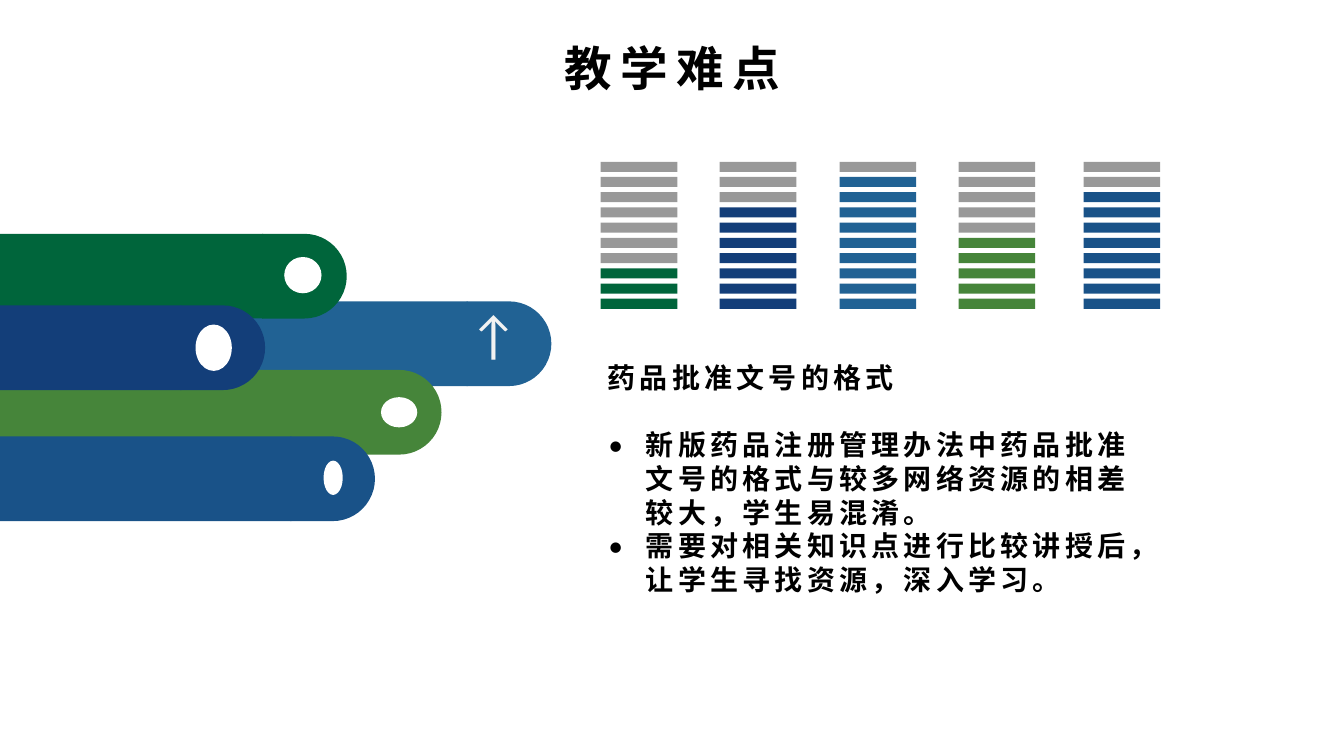
from pptx import Presentation
from pptx import util as u
from pptx.dml import color
from pptx.enum import shapes, text
from pptx.oxml import ns
from lxml import etree

COLOURS = {
    "sky": "216294",
    "forest": "00653B",
    "leaf": "46853A",
    "ocean": "195288",
    "navy": "133E79",
    "grey": "999999",
    "white": "FFFFFF",
    "arrow": "F2F2F2",
    "ink": "000000",
}
CJK_FONT, LATIN_FONT = "Noto Sans CJK SC", "Lato"
CELL = 0.1  # side of one grid cell in inches
COLUMNS, ROWS = 133.33, 75


class SlideBuilder:
    """Draws on one slide; all lengths are grid columns and rows."""

    def __init__(self, presentation):
        presentation.slide_width = self.length(COLUMNS)
        presentation.slide_height = self.length(ROWS)
        self.slide = presentation.slides.add_slide(presentation.slide_layouts[5])

    def length(self, cells):
        return u.Inches(cells * CELL)

    def colour(self, name):
        return color.RGBColor.from_string(COLOURS[name])

    def shape(self, kind, column, row, width, height, fill):
        box = [self.length(cells) for cells in (column, row, width, height)]
        shape = self.slide.shapes.add_shape(kind, *box)
        shape.shadow.inherit = False
        shape.fill.solid()
        shape.fill.fore_color.rgb = self.colour(fill)
        shape.line.fill.background()
        return shape

    def frame(self, shape, wrap=True):
        frame = shape.text_frame
        frame.auto_size = text.MSO_AUTO_SIZE.NONE
        frame.word_wrap = wrap
        frame.vertical_anchor = text.MSO_ANCHOR.TOP
        frame.margin_left = frame.margin_right = u.Inches(0.1)
        frame.margin_top = frame.margin_bottom = u.Inches(0.05)
        return frame

    def run(self, paragraph, words, size, font=CJK_FONT, fill="ink", bold=True, spacing=0):
        run = paragraph.add_run()
        run.text = words
        run.font.size = u.Pt(size)
        run.font.bold = bold
        run.font.color.rgb = self.colour(fill)
        run.font.name = font
        properties = run.font._element
        properties.set("spc", str(spacing * 100))
        etree.SubElement(properties, ns.qn("a:ea")).set("typeface", font)

    def title(self, words, column, row, width, height):
        shape = self.slide.shapes.title
        shape.left, shape.top = self.length(column), self.length(row)
        shape.width, shape.height = self.length(width), self.length(height)
        paragraph = self.frame(shape).paragraphs[0]
        paragraph.alignment = text.PP_ALIGN.CENTER
        paragraph.line_spacing = u.Pt(41)
        self.run(paragraph, words, 34, spacing=6)

    def textbox(self, column, row, width, height, wrap=True):
        box = [self.length(cells) for cells in (column, row, width, height)]
        return self.frame(self.slide.shapes.add_textbox(*box), wrap)

    def bullet(self, paragraph):
        properties = paragraph._p.get_or_add_pPr()
        indent = u.Inches(0.38)
        properties.set("marL", str(indent))
        properties.set("indent", str(-indent))
        etree.SubElement(properties, ns.qn("a:buFont")).set("typeface", LATIN_FONT)
        etree.SubElement(properties, ns.qn("a:buChar")).set("char", "•")

    def ribbon(self, row, cap_column, fill):
        """A band from the left edge of the slide with a rounded end."""
        size = 8.4
        self.shape(shapes.MSO_SHAPE.FLOWCHART_DELAY, cap_column, row, size, size, fill)
        self.shape(shapes.MSO_SHAPE.RECTANGLE, 0, row, cap_column + 0.1, size, fill)

    def dot(self, column, row, width, height):
        self.shape(shapes.MSO_SHAPE.OVAL, column, row, width, height, "white")

    def meter(self, column, level, fill, steps=10):
        """A stack of steps, the lowest `level` of them coloured."""
        for step in range(steps):
            self.shape(shapes.MSO_SHAPE.RECTANGLE, column, 16.05 + step * 1.51, 7.6, 1,
                       fill if step >= steps - level else "grey")


def main():
    presentation = Presentation()
    builder = SlideBuilder(presentation)

    # Title
    builder.title("教学难点", 44.8, 3.3, 43.8, 6.7)

    # Ribbons, each with its mark
    builder.ribbon(29.9, 46.3, "sky")
    paragraph = builder.textbox(47, 29.7, 3.9, 7.1, wrap=False).paragraphs[0]
    paragraph.alignment = text.PP_ALIGN.CENTER
    builder.run(paragraph, "↑", 36, LATIN_FONT, "arrow", bold=False)

    ribbons = [
        (23.2, 26, "forest", (28.2, 25.5, 3.7, 3.6)),
        (36.7, 35.4, "leaf", (37.8, 39.4, 3.6, 3)),
        (43.3, 28.8, "ocean", (32.1, 45.7, 1.9, 3.4)),
        (30.3, 17.9, "navy", (19.4, 32.2, 3.6, 4.6)),
    ]
    for row, cap_column, fill, mark in ribbons:
        builder.ribbon(row, cap_column, fill)
        builder.dot(*mark)

    # Step meters
    meters = [(59.6, 3, "forest"), (71.4, 7, "navy"), (83.3, 9, "sky"),
              (95.1, 5, "leaf"), (107.5, 8, "ocean")]
    for column, level, fill in meters:
        builder.meter(column, level, fill)

    # Heading and bullets
    frame = builder.textbox(59.3, 35.3, 55.6, 31.3)
    lines = [
        "药品批准文号的格式",
        "新版药品注册管理办法中药品批准文号的格式与较多网络资源的相差较大，学生易混淆。",
        "需要对相关知识点进行比较讲授后，让学生寻找资源，深入学习。",
    ]
    for index, words in enumerate(lines):
        paragraph = frame.add_paragraph() if index else frame.paragraphs[0]
        paragraph.line_spacing = u.Pt(24)
        if index:
            builder.bullet(paragraph)
        else:
            paragraph.space_after = u.Pt(24)
        builder.run(paragraph, words, 20, spacing=3)

    presentation.save("out.pptx")


if __name__ == "__main__":
    main()
